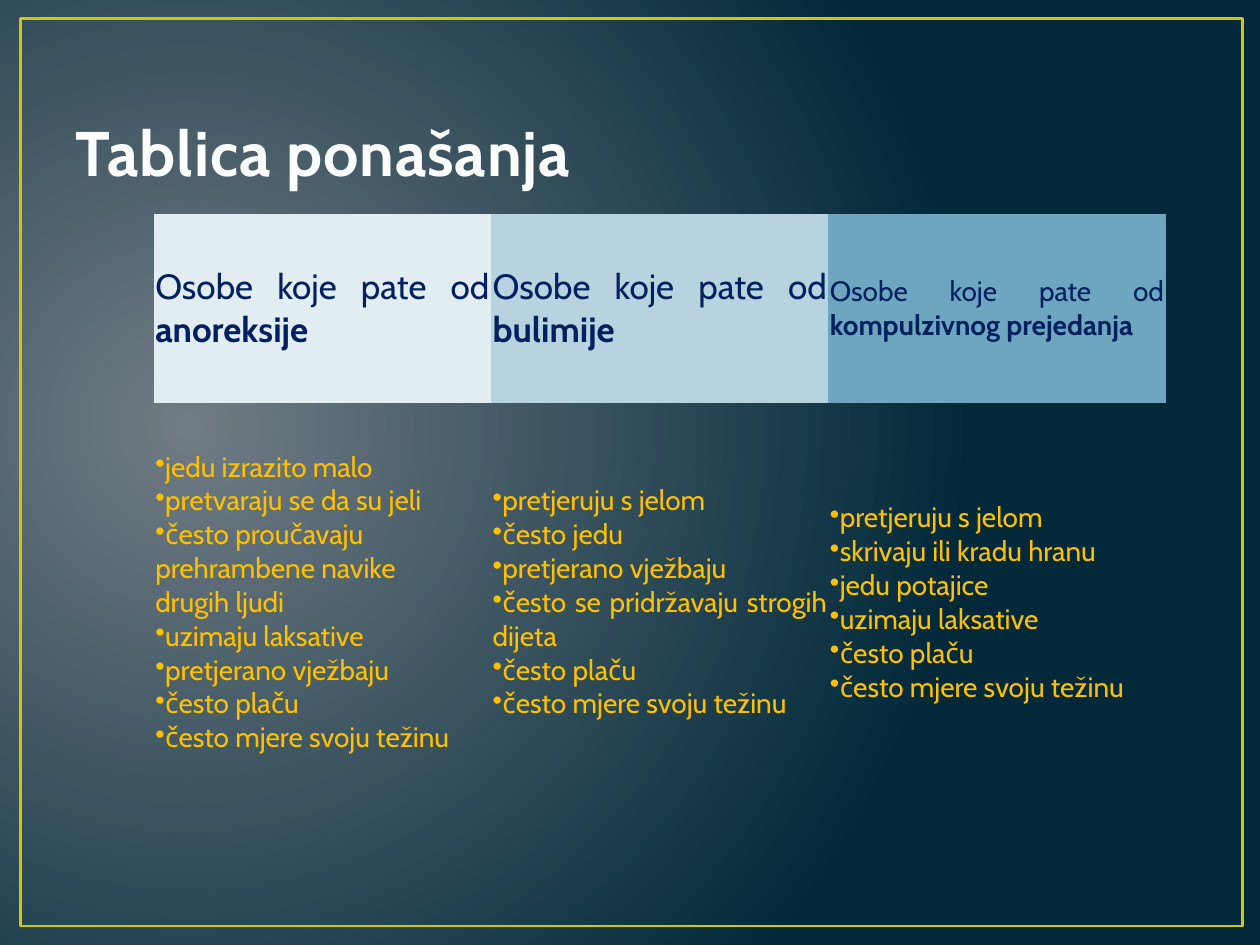
"""Build a slide with a table comparing behaviours in three eating disorders."""
from dataclasses import dataclass

from lxml.etree import SubElement
from pptx import Presentation
from pptx.dml.color import RGBColor as RGB
from pptx.enum.shapes import MSO_SHAPE as Shape
from pptx.enum.text import MSO_ANCHOR as Anchor, PP_ALIGN as Align
from pptx.oxml.ns import qn
from pptx.util import Cm, Pt


@dataclass(frozen=True)
class Theme:
    font: str = "Cabin"
    glow: str = "717C84"
    night: str = "01293A"
    frame: str = "CFC60D"
    title: str = "FEFEFE"
    heading: str = "002060"
    body: str = "FFC000"
    title_size: int = 36
    heading_size: int = 20
    body_size: int = 16


T = Theme()
NO_GRID = "{2D5ABB26-0587-4C30-8999-92F81FD0307C}"
HEADINGS = [
    ("Osobe koje pate od ", "anoreksije", T.heading_size, "E2EDF2"),
    ("Osobe koje pate od\n", "bulimije", T.heading_size, "B7D3DF"),
    ("Osobe koje pate od ", "kompulzivnog prejedanja", T.body_size, "6FA6BF"),
]
WRAPPED = "često proučavaju prehrambene navike"
CONTINUED = "drugih ljudi"
BEHAVIOURS = [
    ["jedu izrazito malo", "pretvaraju se da su jeli", WRAPPED, CONTINUED,
     "uzimaju laksative", "pretjerano vježbaju", "često plaču",
     "često mjere svoju težinu"],
    ["pretjeruju s jelom", "često jedu", "pretjerano vježbaju",
     "često se pridržavaju strogih dijeta", "često plaču",
     "često mjere svoju težinu"],
    ["pretjeruju s jelom", "skrivaju ili kradu hranu", "jedu potajice",
     "uzimaju laksative", "često plaču", "često mjere svoju težinu"],
]


def add_run(p, text, size, color, bold=False):
    """Append a styled run, ending in a line break if the text does."""
    r = p.add_run()
    r.text = text.rstrip("\n")
    r.font.name, r.font.size, r.font.bold = T.font, Pt(size), bold
    r.font.color.rgb = RGB.from_string(color)
    if text.endswith("\n"):
        p.add_line_break()
    return r


def add_bullet(p):
    """Put a bullet directly in front of the paragraph text."""
    pPr = p._p.get_or_add_pPr()
    pPr.set("marL", "0")
    pPr.set("indent", "0")
    SubElement(pPr, qn("a:buChar"), char="•")


def set_background(s):
    """Fill the background with a circular gradient."""
    fill = s.background.fill
    fill.gradient()
    for stop, color in zip(fill.gradient_stops, (T.glow, T.night)):
        stop.color.rgb = RGB.from_string(color)
    grad = s.element.find(".//" + qn("a:gradFill"))
    grad.remove(grad.find(qn("a:lin")))
    circle = SubElement(grad, qn("a:path"), path="circle")
    SubElement(circle, qn("a:fillToRect"),
               l="15000", t="50000", r="85000", b="60000")


def add_frame(s):
    """Draw the thin frame around the slide."""
    sp = s.shapes.add_shape(Shape.RECTANGLE, Cm(0.41), Cm(0.38),
                            Cm(24.64), Cm(18.29))
    sp.shadow.inherit = False
    sp.fill.background()
    sp.line.color.rgb = RGB.from_string(T.frame)
    sp.line.width = Pt(1.5)


def add_title(s, text):
    """Add the slide title, resting on the bottom of its box."""
    tf = s.shapes.add_textbox(Cm(1.27), Cm(0.76), Cm(22.86), Cm(3.18)).text_frame
    tf.word_wrap = True
    tf.vertical_anchor = Anchor.BOTTOM
    r = add_run(tf.paragraphs[0], text, T.title_size, T.title, True)
    r.font._element.set("spc", "50")


def prepare_cell(cell, color=None):
    """Set anchor, margins and fill of a cell and return its text frame."""
    cell.vertical_anchor = Anchor.MIDDLE
    cell.margin_left = cell.margin_right = Cm(0.03)
    cell.margin_top = cell.margin_bottom = Cm(0.03)
    if color:
        cell.fill.solid()
        cell.fill.fore_color.rgb = RGB.from_string(color)
    else:
        cell.fill.background()
    return cell.text_frame


def fill_heading(cell, lead, name, size, color):
    """Write a column heading with the disorder in bold."""
    p = prepare_cell(cell, color).paragraphs[0]
    p.alignment = Align.JUSTIFY
    add_run(p, lead, size, T.heading)
    add_run(p, name, size, T.heading, True)


def fill_behaviours(cell, items):
    """Write a bulleted list of behaviours."""
    tf = prepare_cell(cell)
    for i, item in enumerate(items):
        p = tf.add_paragraph() if i else tf.paragraphs[0]
        p.alignment = Align.LEFT if item == WRAPPED else Align.JUSTIFY
        if item != CONTINUED:
            add_bullet(p)
        add_run(p, item, T.body_size, T.body)


def add_behaviour_table(s):
    """Add the table with one column per disorder."""
    frame = s.shapes.add_table(2, len(HEADINGS), Cm(3.1), Cm(4.32),
                               Cm(20.4), Cm(11.84))
    table = frame.table
    table.first_row = table.horz_banding = False
    table._tbl.tblPr.find(qn("a:tableStyleId")).text = NO_GRID
    for row, height in zip(table.rows, (3.81, 8.03)):
        row.height = Cm(height)
    for col, (heading, items) in enumerate(zip(HEADINGS, BEHAVIOURS)):
        table.columns[col].width = Cm(6.8)
        fill_heading(table.cell(0, col), *heading)
        fill_behaviours(table.cell(1, col), items)


def main():
    """Build and save the presentation."""
    prs = Presentation()
    prs.slide_width, prs.slide_height = Cm(25.4), Cm(19.05)
    s = prs.slides.add_slide(prs.slide_layouts[6])
    set_background(s)
    add_frame(s)
    add_title(s, "Tablica ponašanja")
    add_behaviour_table(s)
    prs.save("out.pptx")


if __name__ == "__main__":
    main()
